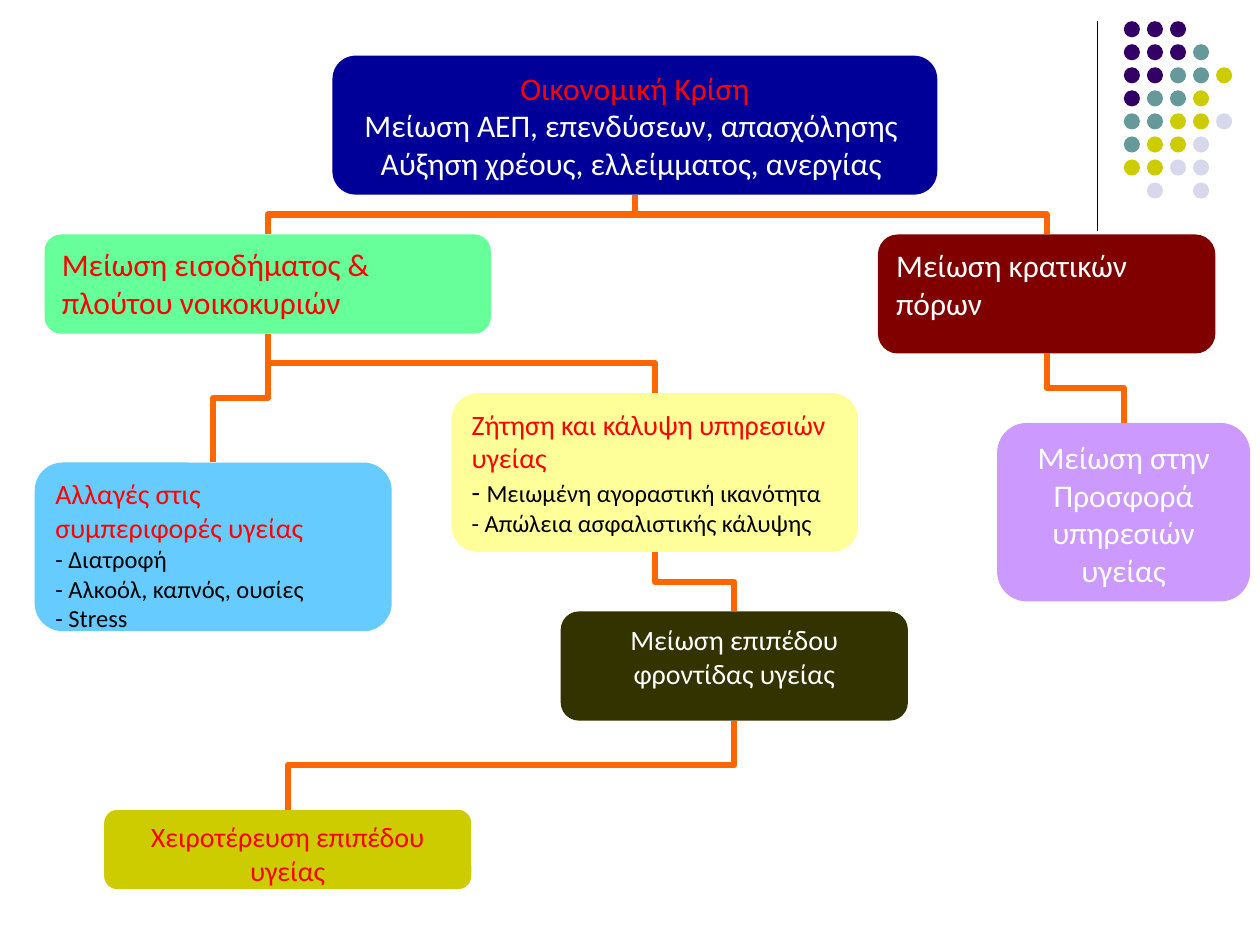
"""Build a flow chart slide on how the economic crisis affects health."""
from dataclasses import dataclass

from pptx import Presentation
from pptx.dml.color import RGBColor
from pptx.enum.shapes import MSO_CONNECTOR, MSO_SHAPE
from pptx.enum.text import MSO_ANCHOR, PP_ALIGN
from pptx.oxml.ns import qn
from pptx.shapes.autoshape import Shape
from pptx.shapes.connector import Connector
from pptx.slide import Slide
from pptx.util import Pt


@dataclass(frozen=True)
class Theme:
    font: str = "Calibri"
    large: int = 18
    medium: int = 16
    small: int = 14
    red: str = "FF0000"
    white: str = "FFFFFF"
    black: str = "000000"
    link: str = "FF6600"
    link_width: float = 3.5
    rule_width: float = 0.75
    purple: str = "330066"
    teal: str = "669999"
    olive: str = "CCCC00"
    lavender: str = "D8D8EC"
    navy: str = "000099"
    mint: str = "66FF99"
    maroon: str = "800000"
    cream: str = "FFFF99"
    sky: str = "66CCFF"
    moss: str = "333300"
    lilac: str = "CC99FF"


@dataclass(frozen=True)
class Run:
    text: str
    size: int
    color: str


@dataclass(frozen=True)
class Box:
    key: str
    left: float
    top: float
    width: float
    height: float
    fill: str
    paragraphs: list[list[Run]]
    align: PP_ALIGN = PP_ALIGN.LEFT


THEME = Theme()
DOT_ROWS = ["PPP", "PPPT", "PPTTO", "PTTO", "TTOOL", "TOOL", "OOLL", " L L"]
DOT_COLORS = {"P": THEME.purple, "T": THEME.teal, "O": THEME.olive, "L": THEME.lavender}
DOT_LEFT, DOT_TOP, DOT_PITCH, DOT_SIZE = 642.2, 12.1, 13.17, 9.2

BOXES = [
    Box("crisis", 190, 31.8, 345.6, 79.4, THEME.navy, [
        [Run("Οικονομική Κρίση", THEME.large, THEME.red)],
        [Run("Μείωση ΑΕΠ, επενδύσεων, απασχόλησης ", THEME.large, THEME.white)],
        [Run("Αύξηση χρέους, ελλείμματος, ανεργίας ", THEME.large, THEME.white)],
    ], PP_ALIGN.CENTER),
    Box("income", 25.5, 134, 255, 56.7, THEME.mint, [
        [Run("Μείωση εισοδήματος & πλούτου νοικοκυριών", THEME.large, THEME.red)],
    ]),
    Box("state", 501.7, 134, 192.8, 68, THEME.maroon, [
        [Run("Μείωση κρατικών πόρων", THEME.large, THEME.white)],
    ]),
    Box("demand", 258, 224.7, 232.4, 90.7, THEME.cream, [
        [Run("Ζήτηση και κάλυψη υπηρεσιών υγείας", THEME.medium, THEME.red)],
        [Run("- ", THEME.medium, THEME.black),
         Run("Μειωμένη αγοραστική ικανότητα", THEME.small, THEME.black)],
        [Run("- Απώλεια ασφαλιστικής κάλυψης", THEME.small, THEME.black)],
    ]),
    Box("behaviour", 19.8, 264.3, 204, 96.4, THEME.sky, [
        [Run("Αλλαγές στις συμπεριφορές υγείας", THEME.medium, THEME.red)],
        [Run("- Διατροφή", THEME.small, THEME.black)],
        [Run("- Αλκοόλ, καπνός, ουσίες", THEME.small, THEME.black)],
        [Run("- Stress", THEME.small, THEME.black)],
    ]),
    Box("care", 320.4, 349.4, 198.4, 62.4, THEME.moss, [
        [Run("Μείωση επιπέδου φροντίδας υγείας", THEME.medium, THEME.white)],
    ], PP_ALIGN.CENTER),
    Box("health", 59.5, 462.8, 209.8, 45.3, THEME.olive, [
        [Run("Χειροτέρευση επιπέδου υγείας", THEME.medium, THEME.red)],
    ], PP_ALIGN.CENTER),
    Box("supply", 569.8, 241.7, 144.6, 102, THEME.lilac, [
        [Run("Μείωση στην Προσφορά υπηρεσιών υγείας", THEME.large, THEME.white)],
    ], PP_ALIGN.CENTER),
]
LINKS = [
    ("crisis", "income"), ("crisis", "state"), ("income", "behaviour"),
    ("income", "demand"), ("demand", "care"), ("care", "health"), ("state", "supply"),
]


def add_filled(slide: Slide, kind: MSO_SHAPE, left: float, top: float,
               width: float, height: float, color: str) -> Shape:
    shape = slide.shapes.add_shape(kind, Pt(left), Pt(top), Pt(width), Pt(height))
    shape.shadow.inherit = False
    shape.fill.solid()
    shape.fill.fore_color.rgb = RGBColor.from_string(color)
    shape.line.fill.background()
    return shape


def style_line(connector: Connector, color: str, width: float) -> None:
    connector.line.color.rgb = RGBColor.from_string(color)
    connector.line.width = Pt(width)
    properties = connector.element.spPr
    properties.append(properties.makeelement(qn("a:effectLst"), {}))


def add_dots(slide: Slide) -> None:
    for row, codes in enumerate(DOT_ROWS):
        for column, code in enumerate(codes):
            if code in DOT_COLORS:
                add_filled(slide, MSO_SHAPE.OVAL, DOT_LEFT + column * DOT_PITCH,
                           DOT_TOP + row * DOT_PITCH, DOT_SIZE, DOT_SIZE, DOT_COLORS[code])


def add_box(slide: Slide, box: Box) -> Shape:
    shape = add_filled(slide, MSO_SHAPE.ROUNDED_RECTANGLE, box.left, box.top,
                       box.width, box.height, box.fill)
    frame = shape.text_frame
    for attribute, value in {"word_wrap": True, "vertical_anchor": MSO_ANCHOR.TOP}.items():
        setattr(frame, attribute, value)
    for index, runs in enumerate(box.paragraphs):
        paragraph = frame.add_paragraph() if index else frame.paragraphs[0]
        paragraph.alignment = box.align
        for item in runs:
            run = paragraph.add_run()
            run.text = item.text
            for attribute, value in {"name": THEME.font, "size": Pt(item.size)}.items():
                setattr(run.font, attribute, value)
            run.font.color.rgb = RGBColor.from_string(item.color)
    return shape


def add_link(slide: Slide, source: Shape, target: Shape) -> None:
    connector = slide.shapes.add_connector(MSO_CONNECTOR.ELBOW, 0, 0, 0, 0)
    connector.begin_connect(source, 2)
    connector.end_connect(target, 0)
    start_x, end_x = (shape.left + shape.width // 2 for shape in (source, target))
    start_y, end_y = source.top + source.height, target.top
    length, span = end_y - start_y, abs(end_x - start_x)
    frame = {
        "left": (start_x + end_x - length) // 2,
        "top": (start_y + end_y - span) // 2,
        "width": length,
        "height": span,
    }
    for attribute, value in frame.items():
        setattr(connector, attribute, value)
    rightward = end_x > start_x
    turn = {"rot": "16200000" if rightward else "5400000",
            "flipH": "1" if rightward else "0", "flipV": "0"}
    for attribute, value in turn.items():
        connector.element.spPr.xfrm.set(attribute, value)
    style_line(connector, THEME.link, THEME.link_width)


def main() -> None:
    presentation = Presentation()
    presentation.slide_width, presentation.slide_height = Pt(720), Pt(540)
    slide = presentation.slides.add_slide(presentation.slide_layouts[6])
    rule = slide.shapes.add_connector(
        MSO_CONNECTOR.STRAIGHT, Pt(627.1), Pt(12.2), Pt(627.1), Pt(131.8))
    style_line(rule, THEME.black, THEME.rule_width)
    add_dots(slide)
    shapes = {box.key: add_box(slide, box) for box in BOXES}
    for source, target in LINKS:
        add_link(slide, shapes[source], shapes[target])
    presentation.save("out.pptx")


if __name__ == "__main__":
    main()
